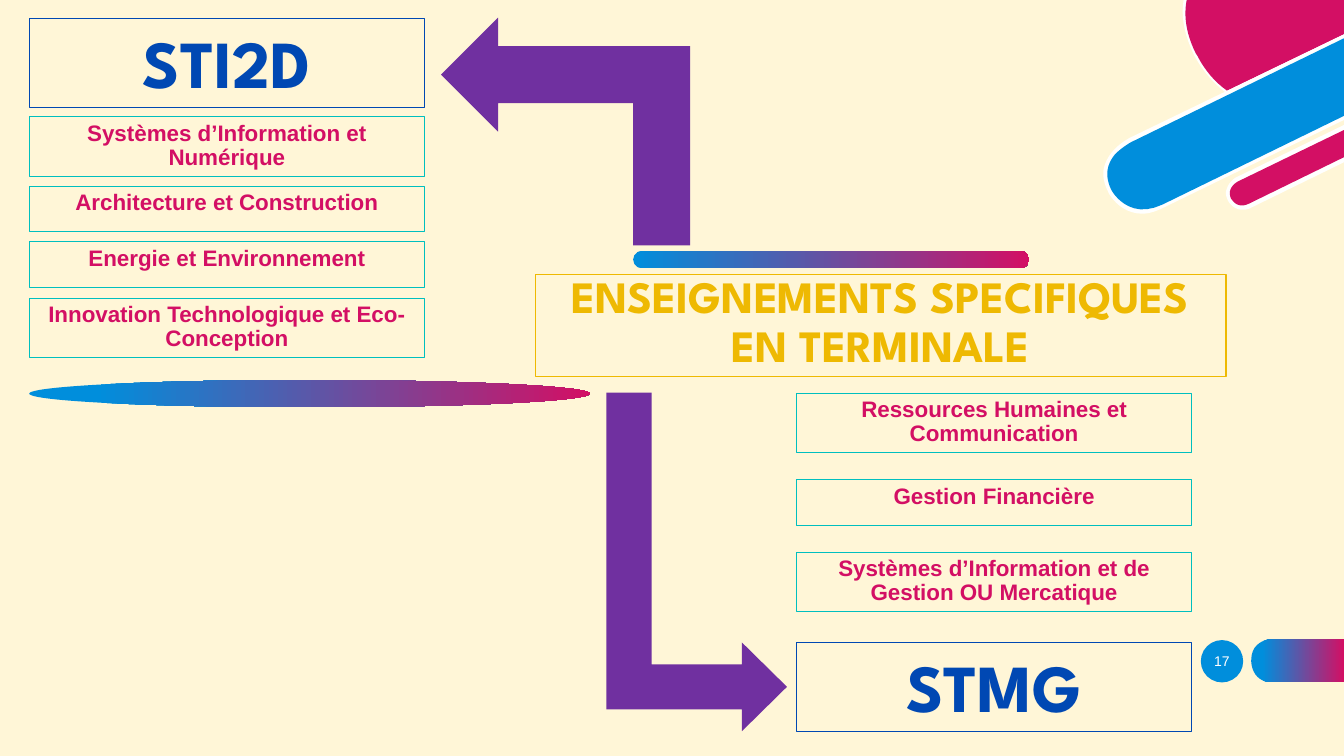
"""Slide on the specific subjects of the final year: STI2D and STMG."""
from pptx import Presentation
from pptx.dml.color import RGBColor
from pptx.enum.shapes import MSO_SHAPE as Shape
from pptx.enum.text import MSO_ANCHOR as Anchor, MSO_AUTO_SIZE as AutoSize, PP_ALIGN as Align
from pptx.util import Inches, Pt

BLUE, PINK, WHITE = "008EDC", "D30F64", "FFFFFF"
NAVY, TEAL, GOLD, PURPLE, CREAM = "0048B3", "00BFBF", "EEB902", "7030A0", "FFF6D7"
HEADING, BODY = "League Spartan", "Arial"
LEFT, RIGHT, CARD_WIDTH = 0.29, 7.9, 3.92
ONE_LINE, TWO_LINES = 0.45, 0.59
EDGE = 13.33

STI2D_CARDS = [
    ("Systèmes d’Information et Numérique", 1.16, TWO_LINES),
    ("Architecture et Construction", 1.85, ONE_LINE),
    ("Energie et Environnement", 2.4, ONE_LINE),
    ("Innovation Technologique et Eco-Conception", 2.96, TWO_LINES),
]
STMG_CARDS = [
    ("Ressources Humaines et Communication", 3.9, TWO_LINES),
    ("Gestion Financière", 4.76, ONE_LINE),
    ("Systèmes d’Information et de Gestion OU Mercatique", 5.48, TWO_LINES),
]

CORNER_PIECES = [
    (WHITE, [(11.74, 0), (11.71, 0.17, 11.75, 0.35, 11.84, 0.54),
             (11.86, 0.58, 11.96, 0.77, 12.16, 0.92), (EDGE, 0.36), (EDGE, 0)]),
    (PINK, [(11.77, 0), (11.74, 0.15, 11.76, 0.33, 11.86, 0.53), (11.88, 0.56),
            (11.88, 0.56, 11.97, 0.76, 12.17, 0.9), (EDGE, 0.34), (EDGE, 0)]),
    (WHITE, [(EDGE, 0.34), (11.2, 1.37), (11.19, 1.38, 11.02, 1.46, 10.96, 1.63),
             (10.93, 1.71, 10.94, 1.8, 10.99, 1.9), (10.99, 1.91, 11.1, 2.12, 11.33, 2.12),
             (11.39, 2.12, 11.46, 2.1, 11.54, 2.06), (EDGE, 1.19)]),
    (BLUE, [(EDGE, 0.38), (11.22, 1.41), (11.22, 1.41, 11.13, 1.46, 11.06, 1.53),
            (10.97, 1.64, 10.96, 1.75, 11.02, 1.88), (11.03, 1.9, 11.19, 2.19, 11.53, 2.03),
            (EDGE, 1.15)]),
    (WHITE, [(EDGE, 1.24), (12.26, 1.76), (12.26, 1.76, 12.19, 1.8, 12.17, 1.87),
             (12.15, 1.91, 12.16, 1.95, 12.18, 1.99), (12.2, 2.03, 12.25, 2.08, 12.32, 2.08),
             (12.35, 2.08, 12.38, 2.08, 12.41, 2.06), (EDGE, 1.61)]),
    (PINK, [(EDGE, 1.29), (12.28, 1.8), (12.28, 1.8, 12.16, 1.86, 12.21, 1.97),
            (12.22, 1.98, 12.27, 2.08, 12.39, 2.02), (EDGE, 1.56)]),
]
NUMBER_TAB = [(EDGE, 6.34), (12.62, 6.34), (12.62, 6.34, 12.41, 6.34, 12.41, 6.55),
              (12.41, 6.56), (12.41, 6.56, 12.41, 6.77, 12.62, 6.77), (EDGE, 6.77)]


def rgb(value):
    return RGBColor.from_string(value)


def paint(shape, fill=None, line=None, gradient_start=None):
    """Fill with one colour, with the blue to pink gradient, or not at all."""
    if gradient_start is not None:
        shape.fill.gradient()
        shape.fill.gradient_angle = 0
        stops = zip(shape.fill.gradient_stops, (BLUE, PINK), (gradient_start, 1))
        for stop, color, position in stops:
            stop.color.rgb = rgb(color)
            stop.position = position
    elif fill:
        shape.fill.solid()
        shape.fill.fore_color.rgb = rgb(fill)
    else:
        shape.fill.background()
    if line:
        shape.line.color.rgb = rgb(line)
        shape.line.width = Pt(0.75)
    else:
        shape.line.fill.background()


def add_preset(slide, kind, box, **colors):
    shape = slide.shapes.add_shape(kind, *map(Inches, box))
    shape.shadow.inherit = False
    paint(shape, **colors)
    return shape


def curve_points(start, curve, steps=12):
    """Return points along a cubic curve given by two handles and an end."""
    corners = [start, curve[:2], curve[2:4], curve[4:]]
    points = []
    for step in range(1, steps + 1):
        t = step / steps
        weights = ((1 - t) ** 3, 3 * t * (1 - t) ** 2, 3 * t * t * (1 - t), t ** 3)
        points.append(tuple(sum(weight * corner[axis] for weight, corner in zip(weights, corners))
                            for axis in (0, 1)))
    return points


def add_outline(slide, segments, **colors):
    points = [segments[0]]
    for segment in segments[1:]:
        points += [segment] if len(segment) == 2 else curve_points(points[-1], segment)
    corners = [(Inches(x), Inches(y)) for x, y in points]
    builder = slide.shapes.build_freeform(*corners[0])
    builder.add_line_segments(corners[1:], close=True)
    shape = builder.convert_to_shape()
    shape.shadow.inherit = False
    paint(shape, **colors)


def write(shape, text, size, font, color, anchor, bold=True, line_spacing=0.9, space_before=0):
    frame = shape.text_frame
    frame.word_wrap = True
    frame.auto_size = AutoSize.NONE
    frame.vertical_anchor = anchor
    paragraph = frame.paragraphs[0]
    paragraph.alignment = Align.CENTER
    paragraph.line_spacing = line_spacing
    paragraph.space_before = Pt(space_before)
    run = paragraph.add_run()
    run.text = text
    run.font.size = Pt(size)
    run.font.name = font
    run.font.bold = bold
    run.font.color.rgb = rgb(color)


def add_title(slide, text, box):
    title = slide.shapes.title
    title.left, title.top, title.width, title.height = map(Inches, box)
    paint(title, line=GOLD)
    write(title, text, 32, HEADING, GOLD, Anchor.BOTTOM)


def add_track(slide, name, left, top, cards):
    """Add the name of a track and the cards of its subjects."""
    heading = add_preset(slide, Shape.RECTANGLE, (left, top, CARD_WIDTH, 0.89), line=NAVY)
    write(heading, name, 48, HEADING, NAVY, Anchor.BOTTOM)
    for text, card_top, height in cards:
        card = add_preset(slide, Shape.RECTANGLE, (left, card_top, CARD_WIDTH, height), line=TEAL)
        write(card, text, 16, BODY, PINK, Anchor.TOP, space_before=10)


def add_bent_arrow(slide, box, rotation, head=0.25):
    arrow = add_preset(slide, Shape.BENT_UP_ARROW, box, fill=PURPLE)
    arrow.rotation = rotation
    arrow.adjustments[1] = head


def add_slide_number(slide, number):
    add_preset(slide, Shape.OVAL, (11.91, 6.35, 0.42, 0.42), fill=BLUE)
    add_outline(slide, NUMBER_TAB, gradient_start=0.12)
    label = slide.shapes.add_textbox(*map(Inches, (11.82, 6.36, 0.6, 0.4)))
    write(label, number, 10, BODY, WHITE, Anchor.MIDDLE, bold=False, line_spacing=1)


def main():
    presentation = Presentation()
    presentation.slide_width = Inches(13.33)
    presentation.slide_height = Inches(7.5)
    slide = presentation.slides.add_slide(presentation.slide_layouts[5])
    slide.background.fill.solid()
    slide.background.fill.fore_color.rgb = rgb(CREAM)

    for color, segments in CORNER_PIECES:
        add_outline(slide, segments, fill=color)
    bar = add_preset(slide, Shape.ROUNDED_RECTANGLE, (6.28, 2.49, 3.93, 0.17), gradient_start=0)
    bar.adjustments[0] = 0.5
    add_title(slide, "ENSEIGNEMENTS SPECIFIQUES EN TERMINALE", (5.31, 2.72, 6.85, 1.02))
    add_slide_number(slide, "17")
    add_bent_arrow(slide, (4.48, 0.07, 2.26, 2.47), 270)
    add_preset(slide, Shape.OVAL, (LEFT, 3.77, 5.56, 0.27), gradient_start=0.12)
    add_bent_arrow(slide, (5.23, 4.68, 3.36, 1.79), 90, head=0.246)
    add_track(slide, "STI2D", LEFT, 0.18, STI2D_CARDS)
    add_track(slide, "STMG", RIGHT, 6.37, STMG_CARDS)
    presentation.save("out.pptx")


if __name__ == "__main__":
    main()
